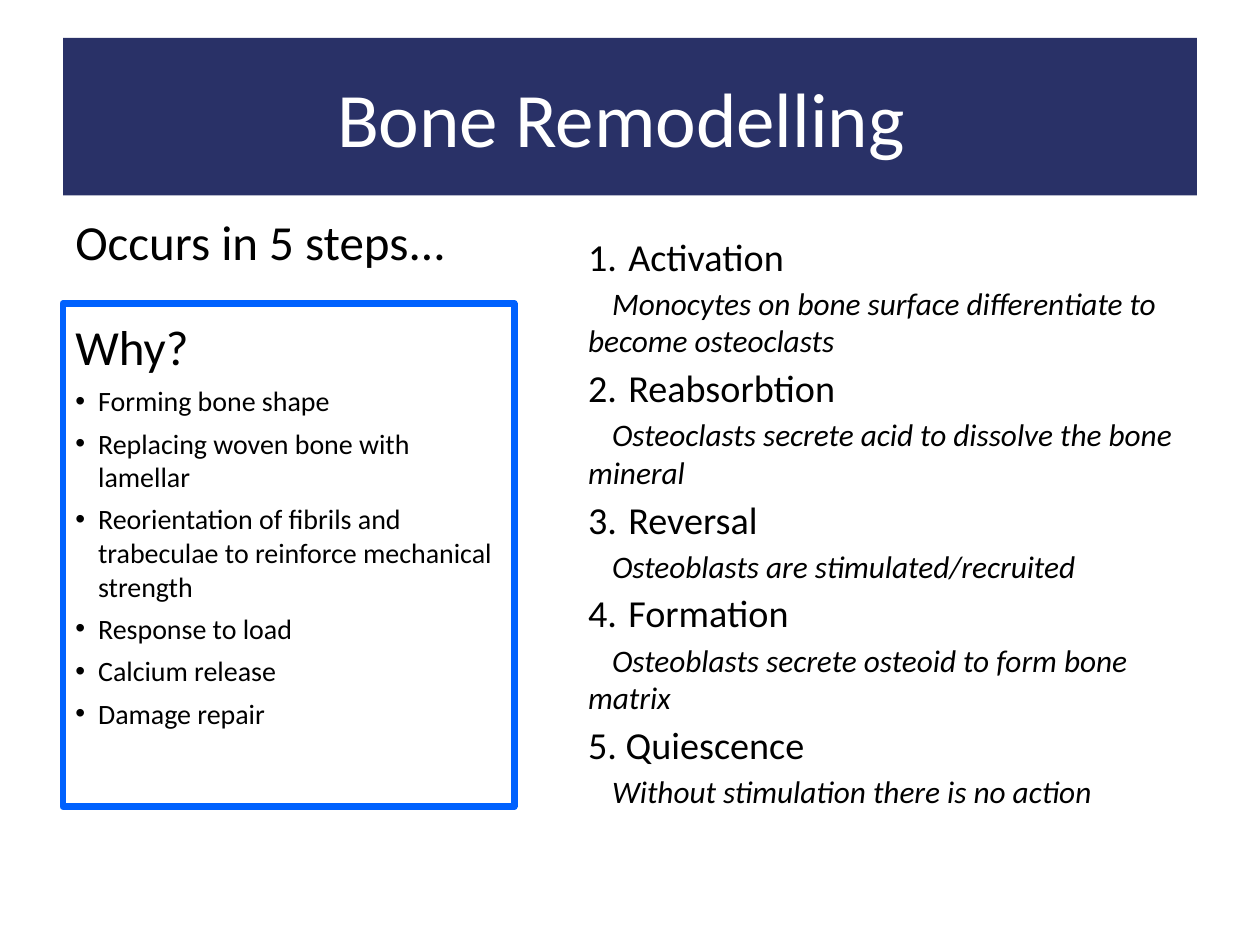
from dataclasses import dataclass

from lxml.etree import SubElement
from pptx import Presentation
from pptx.dml.color import RGBColor
from pptx.enum.shapes import MSO_SHAPE
from pptx.enum.text import MSO_ANCHOR, MSO_AUTO_SIZE, PP_ALIGN
from pptx.oxml.ns import qn
from pptx.util import Pt

# Content
TITLE = "Bone Remodelling "
INTRO = "Occurs in 5 steps..."
REASONS_HEADING = "Why?"
REASONS = [
    "Forming bone shape",
    "Replacing woven bone with lamellar",
    "Reorientation of fibrils and trabeculae to reinforce mechanical strength",
    "Response to load",
    "Calcium release",
    "Damage repair",
]
NUMBERED_STEPS = [
    ("Activation", "Monocytes on bone surface differentiate to become osteoclasts"),
    ("Reabsorbtion", "Osteoclasts secrete acid to dissolve the bone mineral"),
    ("Reversal", "Osteoblasts are stimulated/recruited"),
    ("Formation", "Osteoblasts secrete osteoid to form bone matrix"),
]
LAST_STEP = ("5. Quiescence", "Without stimulation there is no action")


@dataclass(frozen=True)
class Theme:
    font: str = "Calibri"
    banner: RGBColor = RGBColor(0x29, 0x31, 0x67)
    frame: RGBColor = RGBColor(0x00, 0x61, 0xFE)
    light: RGBColor = RGBColor(0xFF, 0xFF, 0xFF)
    dark: RGBColor = RGBColor(0, 0, 0)
    title: float = 44
    heading: float = 28
    reason: float = 16
    step: float = 21.8
    detail: float = 17.9


THEME = Theme()

# Boxes: left, top, width, height in points
SLIDE_SIZE = (720, 540)
BANNER = (36, 21.6, 648, 90)
REASONS_BOX = (36, 173.5, 257.75, 287.3)
STEPS_BOX = (329, 126, 355, 356.4)
INTRO_BOX = (36, 113.75, 283.7, 119.5)

# Paragraph styles; indents are (left margin, first line) in points
HEADING = {"size": THEME.heading, "before": 5}
REASON = {"size": THEME.reason, "before": 5, "indent": (13, -13),
          "bullet": ("a:buChar", {"char": "•"})}
STEP = {"size": THEME.step, "before": 3}
NUMBERED = {**STEP, "indent": (23, -23),
            "bullet": ("a:buAutoNum", {"type": "arabicPeriod"})}
DETAIL = {"size": THEME.detail, "before": 3, "indent": (0, 13.7),
          "italic": True, "level": 1}


def points(values):
    return [Pt(value) for value in values]


def set_all(target, values):
    for name, value in values.items():
        setattr(target, name, value)


def format_paragraph(paragraph, text, size, before=0, indent=(0, 0), bullet=None,
                     italic=False, level=0, color=THEME.dark, align=PP_ALIGN.LEFT):
    run = paragraph.add_run()
    run.text = text
    set_all(run.font, {"name": THEME.font, "size": Pt(size), "italic": italic})
    run.font.color.rgb = color
    set_all(paragraph, {"alignment": align, "level": level,
                        "space_before": Pt(before)})
    properties = paragraph._p.get_or_add_pPr()
    for name, value in zip(("marL", "indent"), points(indent)):
        properties.set(name, str(int(value)))
    if bullet:
        tag, attributes = bullet
        SubElement(properties, qn("a:buFont"), {"typeface": "Arial"})
        SubElement(properties, qn(tag), attributes)


def fill_text(shape, paragraphs, anchor=MSO_ANCHOR.TOP):
    frame = shape.text_frame
    set_all(frame, {"word_wrap": True, "auto_size": MSO_AUTO_SIZE.NONE,
                    "vertical_anchor": anchor})
    for side in ("left", "top", "right", "bottom"):
        setattr(frame, f"margin_{side}", Pt(7.2))
    for index, (text, style) in enumerate(paragraphs):
        paragraph = frame.add_paragraph() if index else frame.paragraphs[0]
        format_paragraph(paragraph, text, **style)


def main():
    presentation = Presentation()
    presentation.slide_width, presentation.slide_height = points(SLIDE_SIZE)
    slide = presentation.slides.add_slide(presentation.slide_layouts[5])
    shapes = slide.shapes

    # Title banner
    title = shapes.title
    set_all(title, dict(zip(("left", "top", "width", "height"), points(BANNER))))
    title.fill.solid()
    title.fill.fore_color.rgb = THEME.banner
    title_style = {"size": THEME.title, "color": THEME.light,
                   "align": PP_ALIGN.CENTER}
    fill_text(title, [(TITLE, title_style)], MSO_ANCHOR.MIDDLE)

    # Framed reasons
    reasons = shapes.add_shape(MSO_SHAPE.RECTANGLE, *points(REASONS_BOX))
    reasons.shadow.inherit = False
    reasons.fill.background()
    reasons.line.color.rgb = THEME.frame
    reasons.line.width = Pt(4)
    fill_text(reasons, [(REASONS_HEADING, HEADING)]
              + [(reason, REASON) for reason in REASONS])

    # Steps, each with its explanation
    paragraphs = []
    for name, detail in NUMBERED_STEPS:
        paragraphs += [(name, NUMBERED), (detail, DETAIL)]
    paragraphs += zip(LAST_STEP, (STEP, DETAIL))
    fill_text(shapes.add_textbox(*points(STEPS_BOX)), paragraphs)

    # Introduction
    fill_text(shapes.add_textbox(*points(INTRO_BOX)), [(INTRO, HEADING)])

    presentation.save("out.pptx")


if __name__ == "__main__":
    main()
